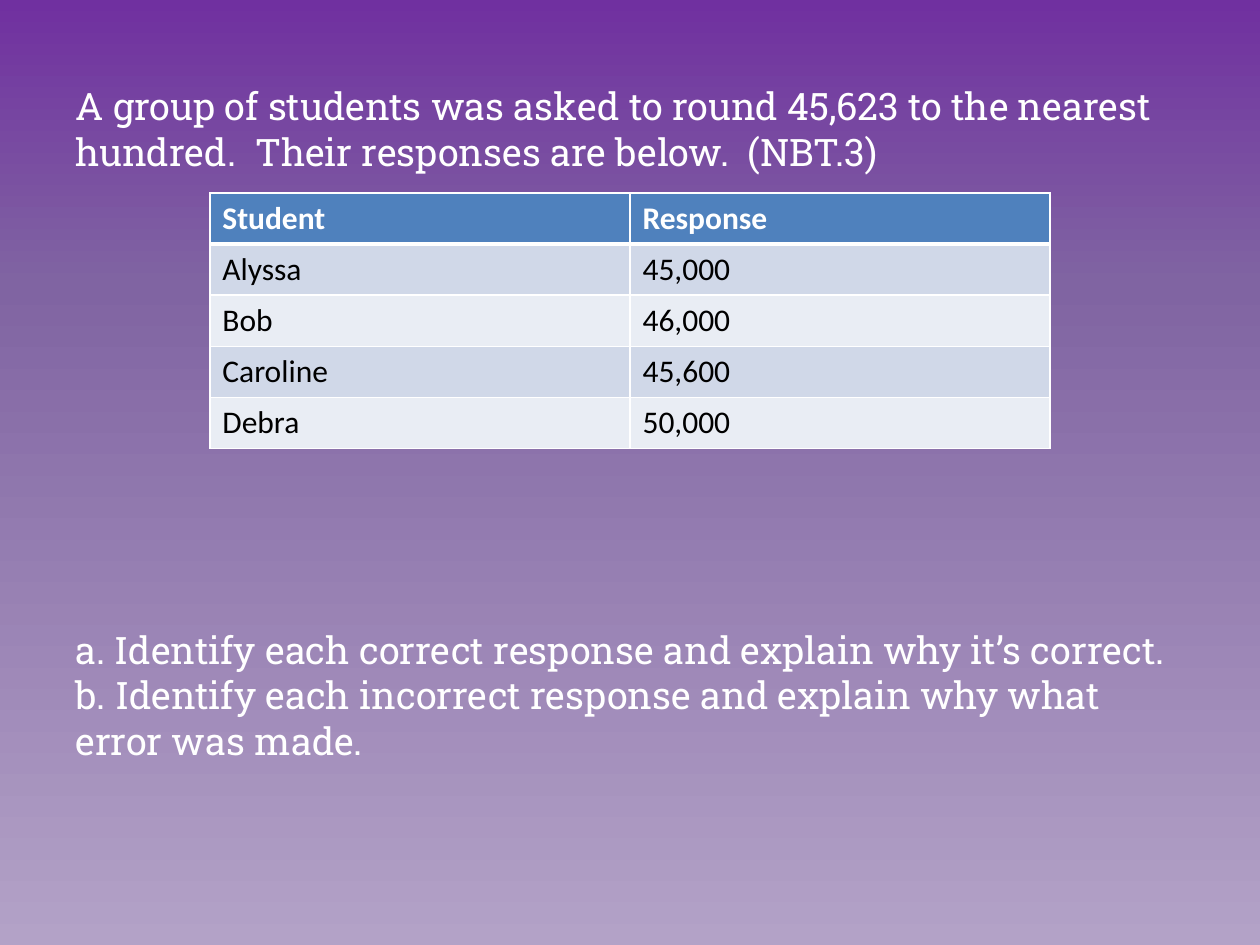
from copy import deepcopy
from dataclasses import dataclass

from lxml import etree
from pptx import Presentation
from pptx.dml.color import RGBColor
from pptx.enum.text import MSO_ANCHOR, MSO_AUTO_SIZE, PP_ALIGN
from pptx.oxml.ns import qn
from pptx.slide import Slide
from pptx.table import _Cell
from pptx.util import Cm, Pt

TOP = MSO_ANCHOR.TOP
NO_AUTOFIT = MSO_AUTO_SIZE.NONE
LEFT = PP_ALIGN.LEFT

COLORS = {
    "purple": "7030A0",
    "violet": "8064A2",
    "lavender": "B3A2C7",
    "white": "FFFFFF",
    "black": "000000",
    "header": "4F81BD",
    "odd_row": "D0D8E8",
    "even_row": "E9EDF4",
}
BACKGROUND_STOPS = [(0, "purple"), (0.3, "violet"), (1, "lavender")]
SPACE_FOR_TABLE = 258.5
COLUMN_WIDTH, ROW_HEIGHT = Cm(8.47), Cm(1.03)


@dataclass
class Prompt:
    text: str
    space_before: float = 0


@dataclass
class Answer:
    student: str
    response: str


PROMPTS = [
    Prompt("A group of students was asked to round 45,623 to the nearest "
           "hundred.  Their responses are below.  (NBT.3)"),
    Prompt("a. Identify each correct response and explain why it’s correct.",
           SPACE_FOR_TABLE),
    Prompt("b. Identify each incorrect response and explain why what error was made."),
]
ANSWERS = [
    Answer("Student", "Response"),
    Answer("Alyssa", "45,000"),
    Answer("Bob", "46,000"),
    Answer("Caroline", "45,600"),
    Answer("Debra", "50,000"),
]


def write(para, text: str, *, font: str, size: float, color: str, bold: bool = False) -> None:
    para.alignment = LEFT
    span = para.add_run()
    span.text = text
    span.font.name = font
    span.font.size = Pt(size)
    span.font.bold = bold
    span.font.color.rgb = RGBColor.from_string(COLORS[color])


def paint_background(page: Slide) -> None:
    fill = page.background.fill
    fill.gradient()
    fill.gradient_angle = 270
    stop_list = page.element.xpath(".//a:gsLst")[0]
    stop_list.append(deepcopy(stop_list[0]))
    for stop, (position, color) in zip(fill.gradient_stops, BACKGROUND_STOPS):
        stop.position = position
        stop.color.rgb = RGBColor.from_string(COLORS[color])


def add_prompts(page: Slide, prompts: list[Prompt]) -> None:
    box = page.shapes.title
    box.left, box.top, box.width, box.height = Cm(1.27), Cm(0.76), Cm(22.86), Cm(17.22)
    frame = box.text_frame
    frame.word_wrap = True
    frame.auto_size = NO_AUTOFIT
    frame.vertical_anchor = TOP
    frame.margin_top = Cm(0.91)
    for index, prompt in enumerate(prompts):
        para = frame.add_paragraph() if index else frame.paragraphs[0]
        para.line_spacing = Pt(26)
        para.space_before = Pt(prompt.space_before)
        write(para, prompt.text, font="Roboto Slab", size=21.6, color="white")


def set_borders(cell: _Cell, widths: dict[str, float]) -> None:
    properties = cell._tc.get_or_add_tcPr()
    for index, (side, width) in enumerate(widths.items()):
        line = etree.Element(qn(f"a:{side}"), w=str(Pt(width)))
        solid = etree.SubElement(line, qn("a:solidFill"))
        etree.SubElement(solid, qn("a:srgbClr"), val=COLORS["white"])
        properties.insert(index, line)


def add_answers(page: Slide, answers: list[Answer]) -> None:
    frame = page.shapes.add_table(len(answers), 2, Cm(4.23), Cm(3.89),
                                  2 * COLUMN_WIDTH, len(answers) * ROW_HEIGHT)
    table = frame.table
    for column in table.columns:
        column.width = COLUMN_WIDTH
    for number, answer in enumerate(answers):
        table.rows[number].height = ROW_HEIGHT
        is_header = number == 0
        fill = "header" if is_header else "odd_row" if number % 2 else "even_row"
        widths = {"lnL": 1, "lnR": 1, "lnT": 3 if number == 1 else 1,
                  "lnB": 3 if is_header else 1}
        for column, text in enumerate((answer.student, answer.response)):
            cell = table.cell(number, column)
            cell.fill.solid()
            cell.fill.fore_color.rgb = RGBColor.from_string(COLORS[fill])
            set_borders(cell, widths)
            write(cell.text_frame.paragraphs[0], text, font="Calibri", size=18,
                  color="white" if is_header else "black", bold=is_header)


def main() -> None:
    deck = Presentation()
    deck.slide_width, deck.slide_height = Cm(25.4), Cm(19.05)
    page = deck.slides.add_slide(deck.slide_layouts[5])  # title only
    paint_background(page)
    add_prompts(page, PROMPTS)
    add_answers(page, ANSWERS)
    deck.save("out.pptx")


if __name__ == "__main__":
    main()
